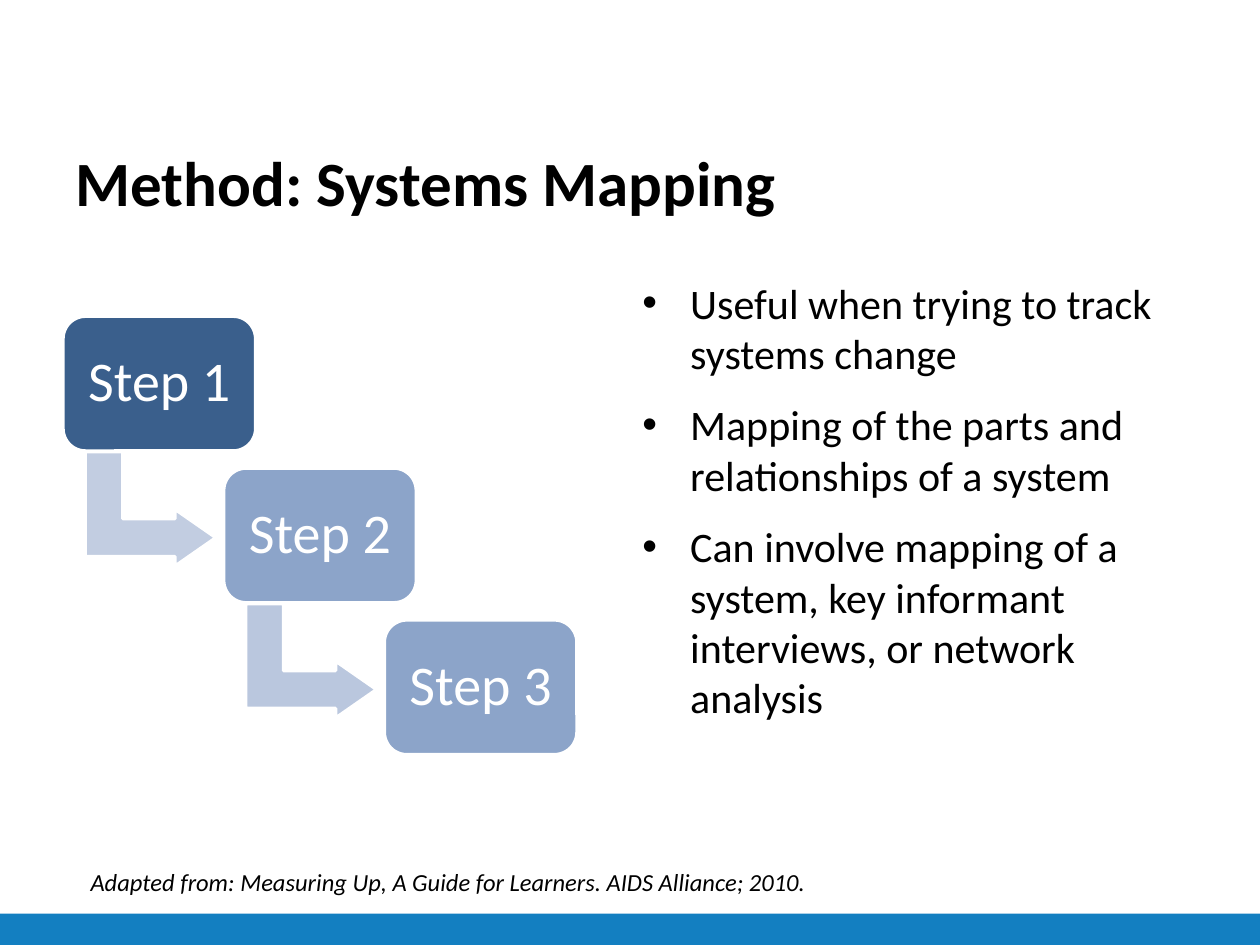
"""Build the Systems Mapping method slide with its three-step staircase."""
from lxml import etree
from pptx import Presentation
from pptx import util as u
from pptx.dml.color import RGBColor
from pptx.enum import shapes, text
from pptx.oxml.ns import qn

COLORS = {
    "text": "000000", "white": "FFFFFF", "bar": "137FC1",
    "first_step": "3A5F8C", "later_step": "8CA4C9",
    "first_arrow": "C2CDE1", "later_arrow": "BAC7DE",
}


def write(frame, lines, size, color="text", bold=False, italic=False, align="LEFT",
          anchor="TOP", fit="NONE", gap=0, bullet=False, spacing=None):
    frame.word_wrap = True
    frame.auto_size = getattr(text.MSO_AUTO_SIZE, fit)
    frame.vertical_anchor = getattr(text.MSO_ANCHOR, anchor)
    for i, line in enumerate(lines):
        paragraph = frame.paragraphs[0] if i == 0 else frame.add_paragraph()
        paragraph.alignment = getattr(text.PP_ALIGN, align)
        paragraph.line_spacing = spacing
        if i:
            paragraph.space_before = u.Pt(gap)
        if bullet:
            props = paragraph._p.get_or_add_pPr()
            props.set("marL", str(u.Inches(0.38)))
            props.set("indent", str(-u.Inches(0.38)))
            etree.SubElement(props, qn("a:buFont"), typeface="Arial")
            etree.SubElement(props, qn("a:buChar"), char="•")
        run = paragraph.add_run()
        run.text = line
        run.font.name = "Calibri"
        run.font.size = u.Pt(size)
        run.font.bold = bold
        run.font.italic = italic
        run.font.color.rgb = RGBColor.from_string(COLORS[color])


def add_block(kind, left, top, width, height, fill, outline=None):
    block = slide.shapes.add_shape(
        kind, u.Inches(left), u.Inches(top), u.Inches(width), u.Inches(height))
    block.shadow.inherit = False
    block.fill.solid()
    block.fill.fore_color.rgb = RGBColor.from_string(COLORS[fill])
    if outline:
        block.line.color.rgb = RGBColor.from_string(COLORS[outline])
        block.line.width = u.Pt(2)
    else:
        block.line.fill.background()
    return block


deck = Presentation()
deck.slide_width, deck.slide_height = u.Inches(10), u.Inches(7.5)
slide = deck.slides.add_slide(deck.slide_layouts[5])

add_block(shapes.MSO_SHAPE.RECTANGLE, 0, 7.25, 10, 0.25, "bar")

title = slide.shapes.title
title.left, title.top = u.Inches(0.5), u.Inches(1.05)
title.width, title.height = u.Inches(9), u.Inches(0.78)
write(title.text_frame, ["Method: Systems Mapping"], 36, bold=True, anchor="MIDDLE")

steps = ["Step 1", "Step 2", "Step 3"]
for i, label in enumerate(steps):
    left, top = 0.5 + 2.55 * i / 2, 2.51 + 2.41 * i / 2
    rank = "later" if i else "first"
    if i < len(steps) - 1:
        arrow = add_block(shapes.MSO_SHAPE.BENT_UP_ARROW, left + 0.24, top + 1.01,
                          0.91, 1.04, f"{rank}_arrow", "white")
        arrow.rotation = 90
        for n, ratio in enumerate([0.33, 0.25, 0.36]):
            arrow.adjustments[n] = ratio
    step = add_block(shapes.MSO_SHAPE.ROUNDED_RECTANGLE, left, top, 1.53, 1.07,
                     f"{rank}_step", "white")
    write(step.text_frame, [label], 32, color="white", align="CENTER",
          anchor="MIDDLE", spacing=0.9)

uses = slide.shapes.add_textbox(u.Inches(5), u.Inches(2.15), u.Inches(4.33), u.Inches(3.97))
write(uses.text_frame, [
    "Useful when trying to track systems change",
    "Mapping of the parts and relationships of a system",
    "Can involve mapping of a system, key informant interviews, or network analysis",
], 24, gap=12, bullet=True, fit="SHAPE_TO_FIT_TEXT")

citation = slide.shapes.add_textbox(
    u.Inches(0.62), u.Inches(6.83), u.Inches(8.38), u.Inches(0.34))
write(citation.text_frame,
      ["Adapted from: Measuring Up, A Guide for Learners. AIDS Alliance; 2010."],
      14, italic=True, fit="SHAPE_TO_FIT_TEXT")

deck.save("out.pptx")
